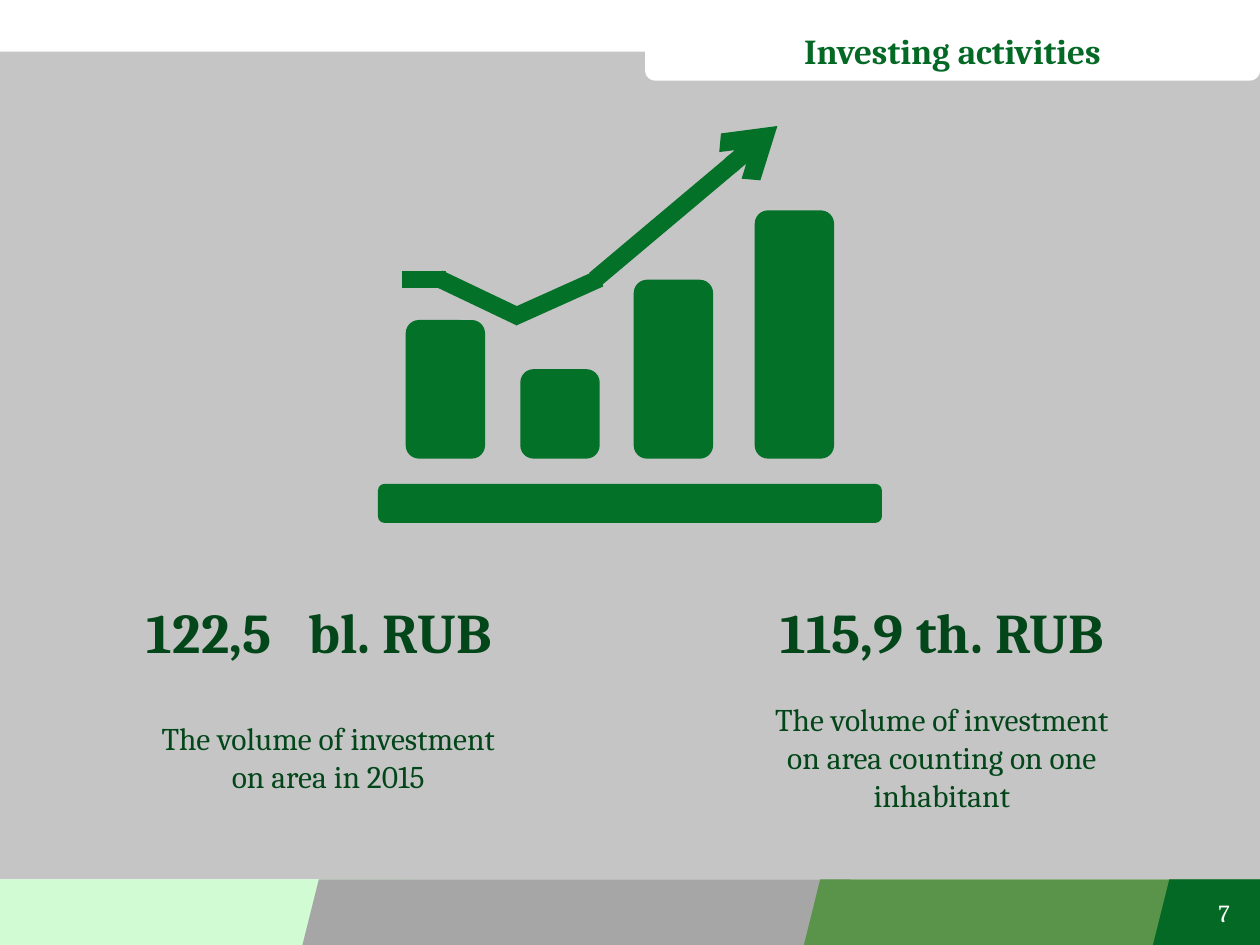
from lxml.etree import SubElement
from pptx import Presentation
from pptx.dml.color import RGBColor
from pptx.enum.shapes import MSO_CONNECTOR, MSO_SHAPE
from pptx.enum.text import MSO_ANCHOR, PP_ALIGN
from pptx.oxml.ns import qn
from pptx.util import Inches, Pt

W, H = 10, 7.5
FONT = "Cambria"
WHITE, GREY, GREEN = "FFFFFF", "A6A6A6", "056926"
ICON_GREEN, TEXT_GREEN = "037128", "03461A"


def rgb(color):
    return RGBColor.from_string(color)


def inches(*lengths):
    return [Inches(v) for v in lengths]


def add_block(shapes, kind, box, color):
    sp = shapes.add_shape(kind, *inches(*box))
    sp.shadow.inherit = False
    sp.fill.solid()
    sp.fill.fore_color.rgb = rgb(color)
    sp.line.fill.background()
    return sp


def add_line(shapes, start, end, color, width, arrow=False):
    line = shapes.add_connector(MSO_CONNECTOR.STRAIGHT, *inches(*start, *end))
    line.line.color.rgb = rgb(color)
    line.line.width = Pt(width)
    if arrow:
        SubElement(line.line._get_or_add_ln(), qn("a:tailEnd"), type="arrow")
    SubElement(line.element.spPr, qn("a:effectLst"))


def write(sp, parts, size, color, bold=False, align=PP_ALIGN.CENTER,
          anchor=MSO_ANCHOR.TOP):
    """Write one paragraph made of the given runs."""
    tf = sp.text_frame
    tf.word_wrap = True
    tf.vertical_anchor = anchor
    p = tf.paragraphs[0]
    p.alignment = align
    for part in parts:
        r = p.add_run()
        r.text = part
        r.font.name, r.font.size, r.font.bold = FONT, Pt(size), bold
        r.font.color.rgb = rgb(color)
    return p


def add_header(s, box):
    """White tab with the slide title on it."""
    tab = add_block(s.shapes, MSO_SHAPE.ROUNDED_RECTANGLE, box, WHITE)
    title = s.shapes.title
    title.left, title.top, title.width, title.height = inches(*box)
    write(title, ["Investing activities"], 20, GREEN, True,
          anchor=MSO_ANCHOR.MIDDLE)
    tab.element.addnext(title.element)


def add_footer(s, box, number):
    """Slanted colour strip with the page number at its right end."""
    x, y, w, h = box
    group = s.shapes.add_group_shape()
    strips = [(-0.02, 0.348, "D1FBD3"), (0.24, 0.435, GREY),
              (0.638, 0.377, "5A944A"), (0.915, 0.098, GREEN)]
    for left, width, color in strips:
        add_block(group.shapes, MSO_SHAPE.PARALLELOGRAM,
                  (x + left * w, y, width * w, h), color)
    sp = s.shapes.add_textbox(*inches(x + 0.946 * w, y + 0.03, 0.4, 0.4))
    write(sp, [number], 14, WHITE, align=PP_ALIGN.RIGHT,
          anchor=MSO_ANCHOR.BOTTOM)


def add_growth_icon(s, box):
    """Four bars on a base, with a rising arrow above them."""
    x, y, w, h = box
    group = s.shapes.add_group_shape()
    base_h, bar_w, floor = 0.31, 0.63, y + 2.64
    add_block(group.shapes, MSO_SHAPE.ROUNDED_RECTANGLE,
              (x, y + h - base_h, w, base_h), ICON_GREEN)
    for left, height in [(0.22, 1.1), (1.13, 0.71), (2.03, 1.42), (2.99, 1.97)]:
        add_block(group.shapes, MSO_SHAPE.ROUNDED_RECTANGLE,
                  (x + left, floor - height, bar_w, height), ICON_GREEN)
    # Neighbouring segments overlap a little to close the joints
    segments = [((0.19, 1.22), (0.54, 1.22)), ((0.48, 1.21), (1.13, 1.52)),
                ((1.07, 1.52), (1.76, 1.21)), ((1.72, 1.22), (3.17, 0))]
    for start, end in segments:
        add_line(group.shapes, (x + start[0], y + start[1]),
                 (x + end[0], y + end[1]), ICON_GREEN, 10,
                 arrow=end == segments[-1][1])


def add_figure(s, value_box, value, caption_box, caption, gap=0):
    """Large value above its caption; gap widens the space after the number."""
    sp = s.shapes.add_textbox(*inches(*value_box))
    number, unit = value.split(" ", 1)
    p = write(sp, [number, " ", unit], 32, TEXT_GREEN, True)
    if gap:
        p.runs[1].font._element.set("spc", str(gap * 100))
    sp = s.shapes.add_textbox(*inches(*caption_box))
    write(sp, [caption], 18, TEXT_GREEN)


def main():
    prs = Presentation()
    prs.slide_width, prs.slide_height = inches(W, H)
    s = prs.slides.add_slide(prs.slide_layouts[5])

    # Background panel, 65 % opaque
    footer_h = 0.52
    panel = add_block(s.shapes, MSO_SHAPE.RECTANGLE,
                      (0, 0.41, W, H - footer_h - 0.41), GREY)
    color = panel.element.spPr.find(qn("a:solidFill"))[0]
    SubElement(color, qn("a:alpha"), val="65000")

    add_header(s, (5.12, 0.16, W - 5.12, 0.48))
    add_footer(s, (0, H - footer_h, W, footer_h), "7")

    # Key figures
    add_figure(s, (0.12, 4.69, 4.83, 0.64), "122,5 bl. RUB",
               (1.11, 5.66, 2.99, 1.01),
               "The volume of investment on area in 2015", gap=14)
    add_figure(s, (5.51, 4.69, 3.94, 0.64), "115,9 th. RUB",
               (5.98, 5.51, 2.99, 1.31),
               "The volume of investment on area counting on one inhabitant")

    add_growth_icon(s, (0.3 * W, 1, 0.4 * W, 3.15))
    prs.save("out.pptx")


if __name__ == "__main__":
    main()
